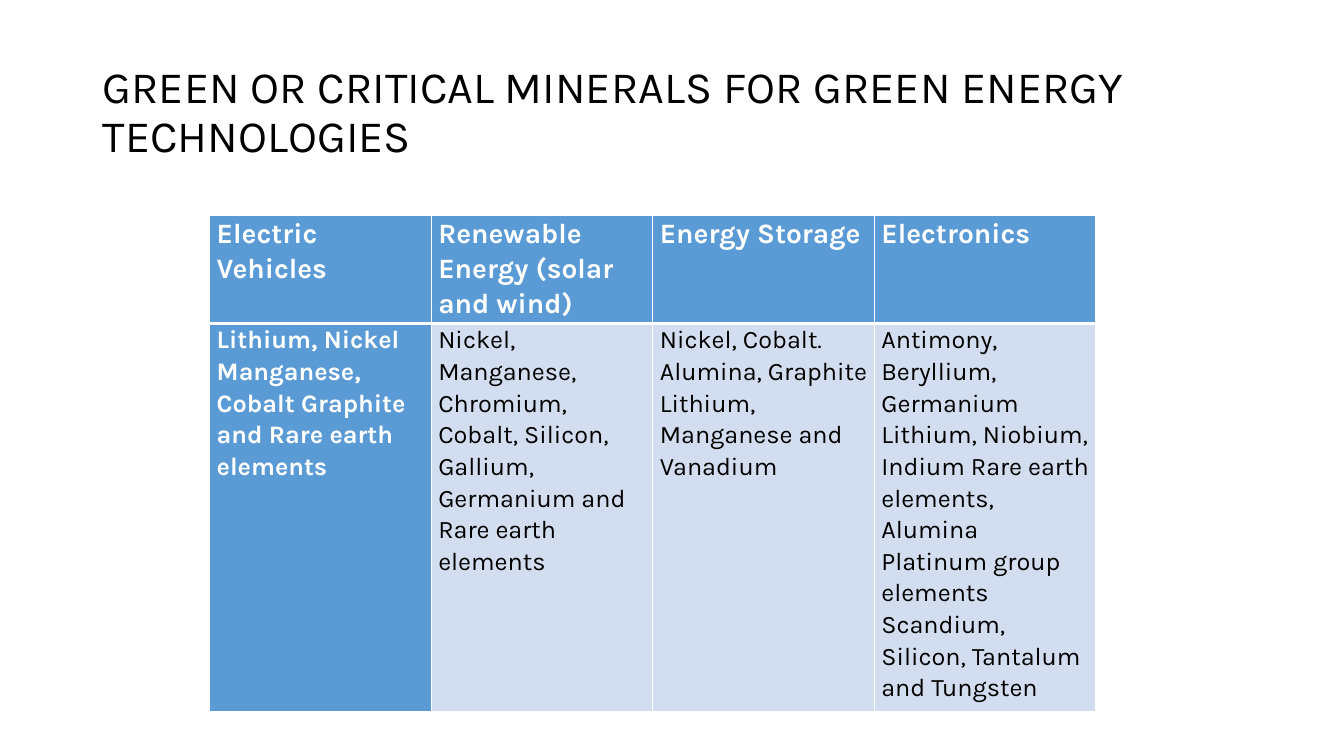
from dataclasses import dataclass

from lxml import etree
from pptx import Presentation
from pptx.dml.color import RGBColor
from pptx.enum.text import MSO_ANCHOR
from pptx.oxml.ns import qn
from pptx.util import Inches, Pt

MIDDLE = MSO_ANCHOR.MIDDLE
TOP = MSO_ANCHOR.TOP


@dataclass(frozen=True)
class Theme:
    font: str = "Karla"
    black: str = "000000"
    white: str = "FFFFFF"
    blue: str = "5B9BD5"
    pale_blue: str = "D2DEEF"
    title_size: int = 32
    header_size: int = 20
    body_size: int = 18
    thin_line: int = 1
    thick_line: int = 3


THEME = Theme()
SLIDE_SIZE = (13.33, 7.5)
TITLE_BOX = (0.92, 0.4, 11.5, 1.45)
TABLE_BOX = (2.08, 2.14, 8.79, 3.74)
HEADER_HEIGHT = 0.79

TITLE = "GREEN OR CRITICAL MINERALS FOR GREEN ENERGY TECHNOLOGIES"
MINERALS = {
    "Electric Vehicles":
        "Lithium, Nickel Manganese, Cobalt Graphite and Rare earth elements",
    "Renewable Energy (solar and wind)":
        "Nickel, Manganese, Chromium, Cobalt, Silicon, Gallium, "
        "Germanium and Rare earth elements",
    "Energy Storage":
        "Nickel, Cobalt. Alumina, Graphite Lithium, Manganese and Vanadium",
    "Electronics":
        "Antimony, Beryllium, Germanium Lithium, Niobium, Indium "
        "Rare earth elements, Alumina Platinum group elements "
        "Scandium, Silicon, Tantalum and Tungsten",
}


def set_attributes(target, values):
    for name, value in values.items():
        setattr(target, name, value)


def write_text(frame, text, size, color, bold, spacing):
    para = frame.paragraphs[0]
    para.line_spacing = spacing
    span = para.add_run()
    span.text = text
    set_attributes(span.font, {"name": THEME.font, "size": Pt(size), "bold": bold})
    span.font.color.rgb = RGBColor.from_string(color)


def add_border(cell, side, width):
    line = etree.SubElement(cell._tc.get_or_add_tcPr(), qn(f"a:ln{side}"), w=str(Pt(width)))
    fill = etree.SubElement(line, qn("a:solidFill"))
    etree.SubElement(fill, qn("a:srgbClr"), val=THEME.white)


def add_title(page, box):
    frame = page.shapes.add_textbox(*map(Inches, box)).text_frame
    set_attributes(frame, {"word_wrap": True, "vertical_anchor": MIDDLE})
    write_text(frame, TITLE, THEME.title_size, THEME.black, False, 0.9)


def fill_cell(cell, text, is_header, is_first_column):
    strong = is_header or is_first_column
    set_attributes(cell, {
        "margin_left": Inches(0.07), "margin_right": Inches(0.07),
        "margin_top": 0, "margin_bottom": 0, "vertical_anchor": TOP,
    })
    # Borders come before the fill in the cell properties
    thick_side = "B" if is_header else "T"
    for side in "LRTB":
        add_border(cell, side, THEME.thick_line if side == thick_side else THEME.thin_line)
    cell.fill.solid()
    cell.fill.fore_color.rgb = RGBColor.from_string(THEME.blue if strong else THEME.pale_blue)
    write_text(cell.text_frame, text,
               THEME.header_size if is_header else THEME.body_size,
               THEME.white if strong else THEME.black, strong, 1.07)


def add_minerals_table(page, box):
    rows = [list(MINERALS), list(MINERALS.values())]
    table = page.shapes.add_table(len(rows), len(MINERALS), *map(Inches, box)).table
    for row, height in zip(table.rows, (HEADER_HEIGHT, box[3] - HEADER_HEIGHT)):
        row.height = Inches(height)
    for row_index, texts in enumerate(rows):
        for column_index, text in enumerate(texts):
            fill_cell(table.cell(row_index, column_index), text,
                      row_index == 0, column_index == 0)


def main():
    deck = Presentation()
    deck.slide_width, deck.slide_height = map(Inches, SLIDE_SIZE)
    page = deck.slides.add_slide(deck.slide_layouts[6])
    add_title(page, TITLE_BOX)
    add_minerals_table(page, TABLE_BOX)
    deck.save("out.pptx")


if __name__ == "__main__":
    main()
